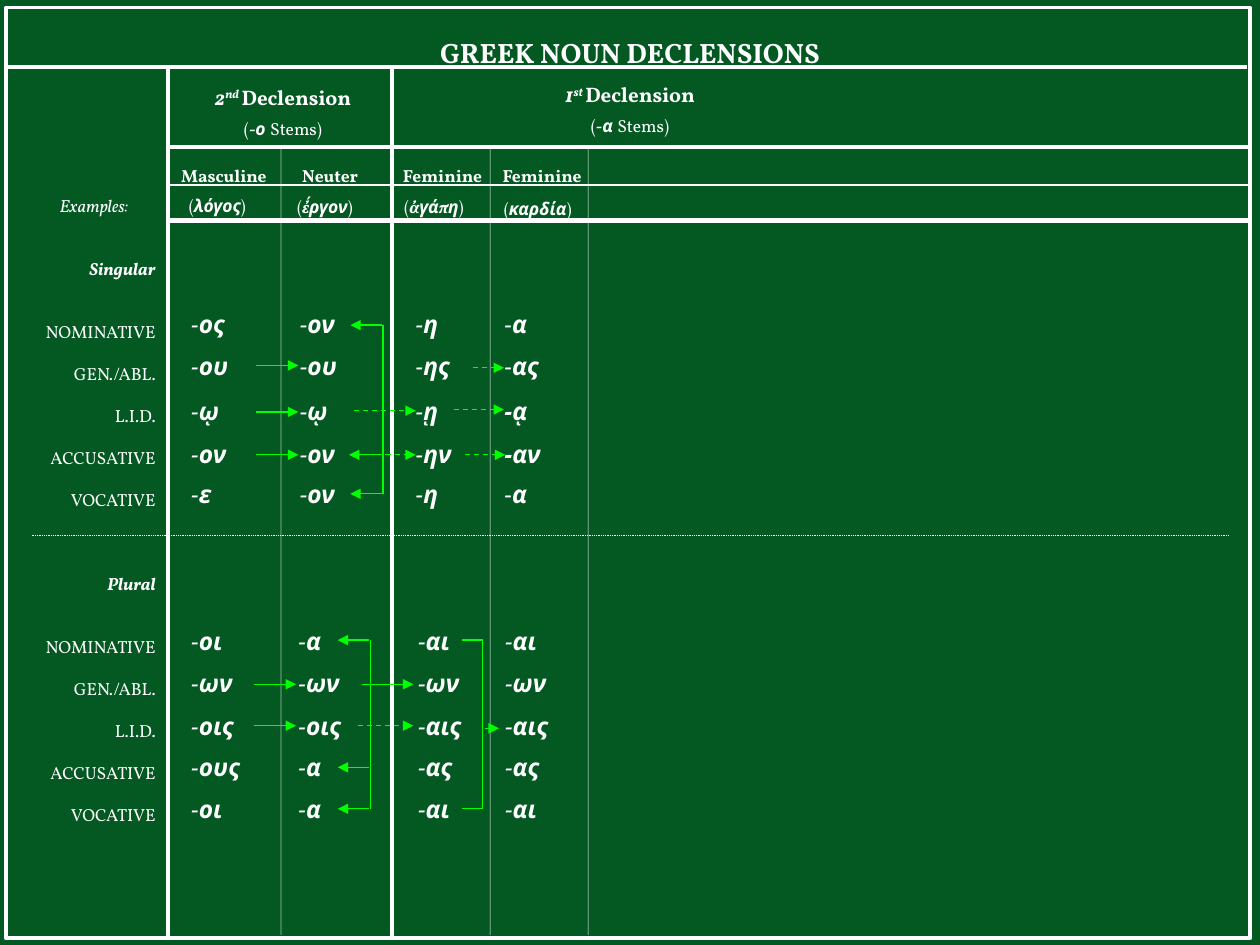
"""Build a one-slide chart of Greek noun declension endings."""
from lxml import etree
from pptx import Presentation
from pptx.dml.color import RGBColor
from pptx.enum.dml import MSO_LINE
from pptx.enum.shapes import MSO_CONNECTOR, MSO_SHAPE
from pptx.enum.text import MSO_ANCHOR, PP_ALIGN
from pptx.oxml.ns import qn
from pptx.util import Pt

LEFT, MID, RIGHT = PP_ALIGN.LEFT, PP_ALIGN.CENTER, PP_ALIGN.RIGHT
DASH, DOT = MSO_LINE.DASH, MSO_LINE.ROUND_DOT
STRAIGHT, RECT = MSO_CONNECTOR.STRAIGHT, MSO_SHAPE.RECTANGLE
MIDDLE = MSO_ANCHOR.MIDDLE
COLORS = {"board": "045822", "chalk": "FFFFFF", "arrow": "00FF00"}
LATIN, GREEK = "Vollkorn", "Open Sans"
STYLES = {
    "plain": {"name": LATIN, "bold": False, "italic": False},
    "bold": {"name": LATIN, "bold": True, "italic": False},
    "slant": {"name": LATIN, "bold": False, "italic": True},
    "strong": {"name": LATIN, "bold": True, "italic": True},
    "super": {"name": LATIN, "bold": True, "italic": True},
    "greek": {"name": GREEK, "bold": True, "italic": True},
    "dash": {"name": GREEK, "bold": False, "italic": True},
}

TITLE = "GREEK NOUN DECLENSIONS"
GROUPS = [
    (95.8, 44.6, 131.8, "2", "nd ", "ο "),
    (306, 43.2, 108, "1", "st ", "α "),
]
HEADS = [
    (96.5, "Masculine", 100.8, 108, [("λόγος", "greek")]),
    (165.6, "Neuter", 162.7, 108.7, [("ἔ", "strong"), ("ργον", "greek")]),
    (223.2, "Feminine", 223.9, 108.7,
     [("ἀ", "strong"), ("γά", "greek"), ("π", "strong"), ("η", "greek")]),
    (280.1, "Feminine", 280.8, 109.4, [("καρδία", "greek")]),
]
CASES = ["NOMINATIVE", "GEN./ABL.", "L.I.D.", "ACCUSATIVE", "VOCATIVE"]
BLOCKS = [
    ("Singular", [172.8, 197.3, 222.5, 247.5, 270.2], [
        (102.2, ["ος", "ου", "ῳ", "ον", "ε"]),
        (164.2, ["ον", "ου", "ῳ", "ον", "ον"]),
        (230.4, ["η", "ης", "ῃ", "ην", "η"]),
        (281.2, ["α", "ας", "ᾳ", "αν", "α"])]),
    ("Plural", [354, 378, 402.5, 426.2, 450], [
        (102.2, ["οι", "ων", "οις", "ους", "οι"]),
        (163.4, ["α", "ων", "οις", "α", "α"]),
        (231.8, ["αι", "ων", "αις", "ας", "αι"]),
        (281.5, ["αι", "ων", "αις", "ας", "αι"])]),
]
HEAVY = {"ᾳ", "αν"}
RULES = [
    (2.2, 38.2, 712.8, 38.2, 2.25), (95.8, 38.2, 95.8, 535, 2.25),
    (95.8, 84.2, 713.5, 84.2, 2.25), (95.8, 126, 715, 126, 3),
    (95, 105.8, 715, 105.8, 1.25), (223.9, 38.9, 223.9, 535, 2.25),
]
FAINT = [160.6, 280.1, 336.2]
ARROWS = [
    (146.5, 170.5, [208.8, 235.4, 259.9]), (145.4, 169.2, [391, 414.7]),
    (218.2, 200.2, [185.8, 282.2]), (211, 193, [365.8, 438.5, 462.2]),
    (206.6, 236.2, [391]), (277.2, 285.1, [416.2]), (218.9, 199.4, [259.9]),
]
DASHED = [
    (202.3, 237.6, 234.7), (204.5, 236.2, 414.7), (270, 288, 210.2),
    (259.2, 288, 234), (265.7, 288.7, 259.9), (220.3, 237.6, 259.9),
]
STEMS = [
    (218.9, 185.8, 218.9, 282.2), (211.7, 365.8, 211.7, 462.2),
    (275.8, 365.8, 275.8, 462.2), (264.2, 365.8, 275.8, 365.8),
    (264.2, 462.2, 275.8, 462.2),
]


def color(name):
    return RGBColor.from_string(COLORS[name])


def write(para, runs, size, align=LEFT, gap=0):
    para.alignment, para.space_before = align, Pt(gap)
    for text, style in runs:
        run = para.add_run()
        run.text = text
        for key, value in {**STYLES[style], "size": Pt(size)}.items():
            setattr(run.font, key, value)
        run.font.color.rgb = color("chalk")
        if style == "super":
            run.font._element.set("baseline", "30000")


def box(slide, x, y, wide, high, paras):
    frame = slide.shapes.add_textbox(Pt(x), Pt(y), Pt(wide), Pt(high)).text_frame
    frame.word_wrap = True
    for i, args in enumerate(paras):
        write(frame.add_paragraph() if i else frame.paragraphs[0], *args)


def line(slide, x1, y1, x2, y2, width=0.75, tone="chalk", dash=None,
         head=False, alpha=None):
    link = slide.shapes.add_connector(STRAIGHT, Pt(x1), Pt(y1), Pt(x2), Pt(y2))
    link.line.width = Pt(width)
    link.line.color.rgb = color(tone)
    if dash:
        link.line.dash_style = dash
    props = link._element.spPr
    stroke = props.find(qn("a:ln"))
    if alpha:
        fill = next(stroke.iter(qn("a:srgbClr")))
        etree.SubElement(fill, qn("a:alpha")).set("val", str(alpha * 1000))
    if head:
        etree.SubElement(stroke, qn("a:tailEnd")).set("type", "triangle")
    etree.SubElement(props, qn("a:effectLst"))


def head(slide):
    title = slide.shapes.title
    spot = {"left": 54, "top": 12.2, "width": 612, "height": 36}
    for key, value in spot.items():
        setattr(title, key, Pt(value))
    title.text_frame.vertical_anchor = MIDDLE
    write(title.text_frame.paragraphs[0], [(TITLE, "bold")], 16, MID)
    for x, y, wide, num, sup, stem in GROUPS:
        top = [(num, "strong"), (sup, "super"), ("Declension", "bold")]
        low = [("(", "plain"), ("-", "strong"), (stem, "greek"), ("Stems)", "plain")]
        box(slide, x, y, wide, 39.6, [(top, 12, MID), (low, 10, MID, 4.7)])
    box(slide, 27, 108, 66, 19.4, [([("Examples:", "slant")], 10)])
    for x, name, left, y, word in HEADS:
        box(slide, x, 90.7, 66, 19.4, [([(name, "bold")], 10)])
        runs = [("(", "plain"), *word, (")", "plain")]
        box(slide, left, y, 66, 19.4, [(runs, 10)])


def body(slide):
    names = []
    for label, tops, cols in BLOCKS:
        names.append(([(label, "strong")], 10, RIGHT, 36 if names else 0))
        for i, case in enumerate(CASES):
            names.append(([(case, "plain")], 10, RIGHT, 12.03 if i else 23.7))
        for x, ends in cols:
            for y, end in zip(tops, ends):
                mark = "greek" if end in HEAVY else "dash"
                box(slide, x, y, 60, 24, [([("-", mark), (end, "greek")], 14)])
    box(slide, -6.2, 144, 102.2, 403, names)


def draw(slide):
    frame = slide.shapes.add_shape(RECT, Pt(3.6), Pt(4.3), Pt(710.6), Pt(532))
    frame.shadow.inherit = False
    frame.fill.background()
    frame.line.color.rgb = color("chalk")
    frame.line.width = Pt(2.25)
    for rule in RULES:
        line(slide, *rule)
    for x in FAINT:
        line(slide, x, 85, x, 534.2, alpha=35)
    line(slide, 18, 306, 702, 306, 0.5, dash=DOT)
    for x1, x2, rows in ARROWS:
        for y in rows:
            line(slide, x1, y, x2, y, tone="arrow", head=True)
    for x1, x2, y in DASHED:
        line(slide, x1, y, x2, y, tone="arrow", dash=DASH, head=True)
    for stem in STEMS:
        line(slide, *stem, tone="arrow")


def main():
    deck = Presentation()
    deck.slide_width, deck.slide_height = Pt(720), Pt(540)
    slide = deck.slides.add_slide(deck.slide_layouts[5])
    slide.background.fill.solid()
    slide.background.fill.fore_color.rgb = color("board")
    for part in (head, draw, body):
        part(slide)
    deck.save("out.pptx")


if __name__ == "__main__":
    main()
